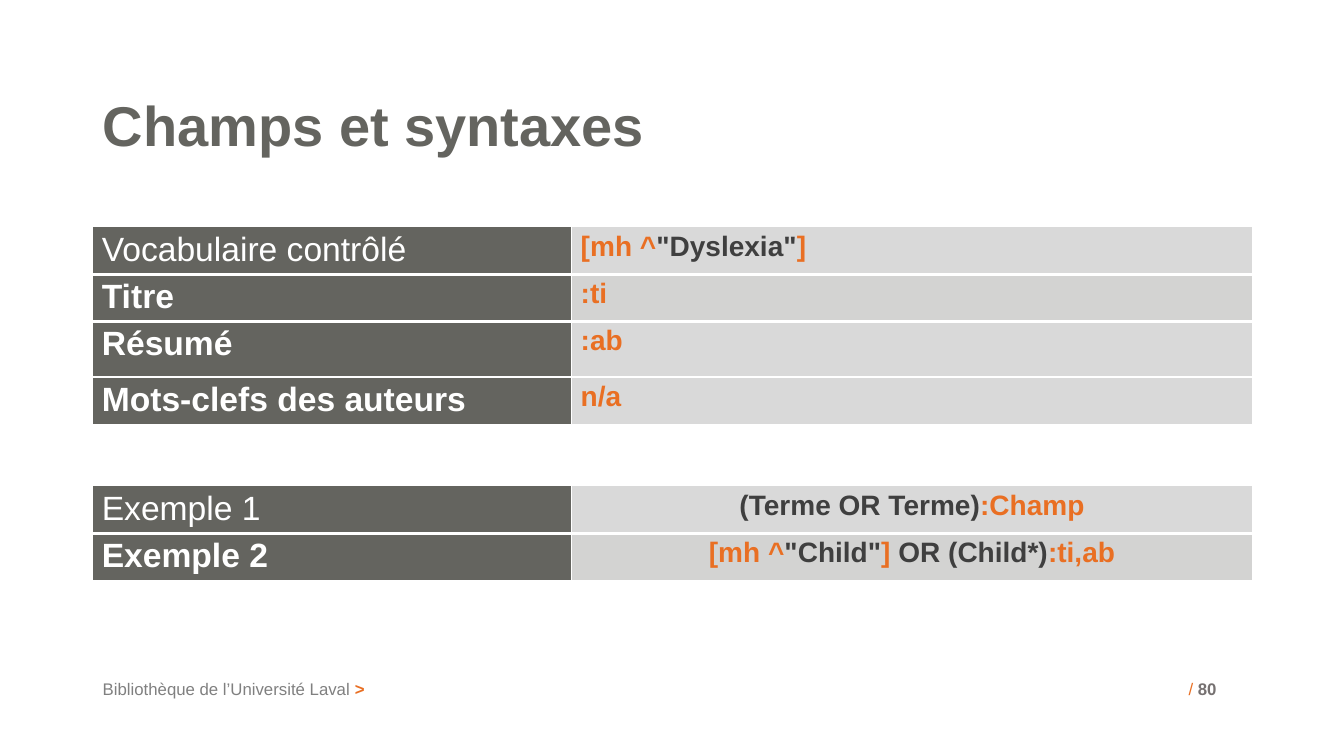
import pptx
import pptx.util
import pptx.dml.color
import pptx.enum.text
import pptx.oxml

RGBColor = pptx.dml.color.RGBColor
Inches = pptx.util.Inches
Pt = pptx.util.Pt
ALIGN = pptx.enum.text.PP_ALIGN
ANCHOR = pptx.enum.text.MSO_ANCHOR

SLATE = RGBColor(0x64, 0x64, 0x5F)
ORANGE = RGBColor(0xE9, 0x6F, 0x23)
CHARCOAL = RGBColor(0x3F, 0x3F, 0x3F)
GRAY = RGBColor(0x80, 0x80, 0x80)
NUMBER_GRAY = RGBColor(0x76, 0x71, 0x71)
LIGHT = RGBColor(0xD9, 0xD9, 0xD9)
BAND = RGBColor(0xD3, 0xD3, 0xD2)
WHITE = RGBColor(0xFF, 0xFF, 0xFF)

FONT = "Arial"
LEFT, WIDTH = 0.92, 11.5
COLUMNS = (4.75, 6.75)
ROW, TALL_ROW = 0.47, 0.55
NS = "http://schemas.openxmlformats.org/drawingml/2006/main"

# Each row: label, runs of the syntax, fill, height
FIELDS = [
    ("Vocabulaire contrôlé",
     [("[mh ^", ORANGE), ('"Dyslexia"', CHARCOAL), ("]", ORANGE)], LIGHT, ROW),
    ("Titre", [(":ti", ORANGE)], BAND, ROW),
    ("Résumé", [(":ab", ORANGE)], LIGHT, TALL_ROW),
    ("Mots-clefs des auteurs", [("n/a", ORANGE)], LIGHT, ROW),
]
EXAMPLES = [
    ("Exemple 1",
     [("(Terme OR Terme)", CHARCOAL), (":Champ", ORANGE)], LIGHT, ROW),
    ("Exemple 2",
     [("[mh ^", ORANGE), ('"Child"', CHARCOAL), ("] ", ORANGE),
      ("OR (Child*)", CHARCOAL), (":ti,ab", ORANGE)], BAND, ROW),
]


def add_run(p, text, size, color, bold=False):
    r = p.add_run()
    r.text = text
    r.font.name = FONT
    r.font.size = Pt(size)
    r.font.bold = bold
    r.font.color.rgb = color


def add_title(s, text):
    sp = s.shapes.title
    sp.left, sp.top = Inches(LEFT), Inches(0.87)
    sp.width, sp.height = Inches(WIDTH), Inches(1.18)
    tf = sp.text_frame
    tf.vertical_anchor = ANCHOR.TOP
    tf.margin_top = Inches(0.1)
    p = tf.paragraphs[0]
    p.alignment = ALIGN.LEFT
    p.line_spacing = 0.9
    add_run(p, text, 40, SLATE, True)


def add_footer(s, left, width, runs):
    sp = s.shapes.add_textbox(Inches(left), Inches(6.66), Inches(width), Inches(0.4))
    tf = sp.text_frame
    tf.word_wrap = True
    tf.margin_top = Inches(0.07)
    for text, color, bold in runs:
        add_run(tf.paragraphs[0], text, 12, color, bold)


def set_borders(cell, top, bottom):
    tc_pr = cell._tc.get_or_add_tcPr()
    sides = (("L", 1), ("R", 1), ("T", top), ("B", bottom))
    for i, (side, width) in enumerate(sides):
        tc_pr.insert(i, pptx.oxml.parse_xml(
            f'<a:ln{side} xmlns:a="{NS}" w="{Pt(width)}"><a:solidFill>'
            f'<a:srgbClr val="{WHITE}"/></a:solidFill></a:ln{side}>'))


def add_syntax_table(s, top, rows, align):
    height = sum(row[3] for row in rows)
    table = s.shapes.add_table(len(rows), len(COLUMNS), Inches(LEFT), Inches(top),
                               Inches(WIDTH), Inches(height)).table
    for column, width in zip(table.columns, COLUMNS):
        column.width = Inches(width)
    last = len(rows) - 1
    for i, (label, runs, fill, row_height) in enumerate(rows):
        table.rows[i].height = Inches(row_height)
        label_cell, syntax_cell = table.cell(i, 0), table.cell(i, 1)
        for cell, color in ((label_cell, SLATE), (syntax_cell, fill)):
            cell.fill.solid()
            cell.fill.fore_color.rgb = color
            cell.margin_left = cell.margin_right = Inches(0.09)
            cell.margin_top = cell.margin_bottom = Inches(0.04)
            set_borders(cell, 2.25 if i else 1, 2.25 if i < last else 1)
        # The first label is regular, the others are bold
        add_run(label_cell.text_frame.paragraphs[0], label, 24, WHITE, i > 0)
        p = syntax_cell.text_frame.paragraphs[0]
        p.alignment = align
        p.space_after = Pt(3)
        for text, color in runs:
            add_run(p, text, 20, color, True)


def main():
    prs = pptx.Presentation()
    prs.slide_width, prs.slide_height = Inches(13.33), Inches(7.5)
    s = prs.slides.add_slide(prs.slide_layouts[5])

    add_title(s, "Champs et syntaxes")

    # Search fields, then worked examples
    add_syntax_table(s, 2.25, FIELDS, ALIGN.LEFT)
    add_syntax_table(s, 4.82, EXAMPLES, ALIGN.CENTER)

    # Footer and slide number
    add_footer(s, LEFT, 10.62, [("Bibliothèque de l’Université Laval ", GRAY, False),
                                (">", ORANGE, True)])
    add_footer(s, 11.69, 0.72, [("/ ", ORANGE, False), ("80", NUMBER_GRAY, True)])

    prs.save("out.pptx")


if __name__ == "__main__":
    main()
